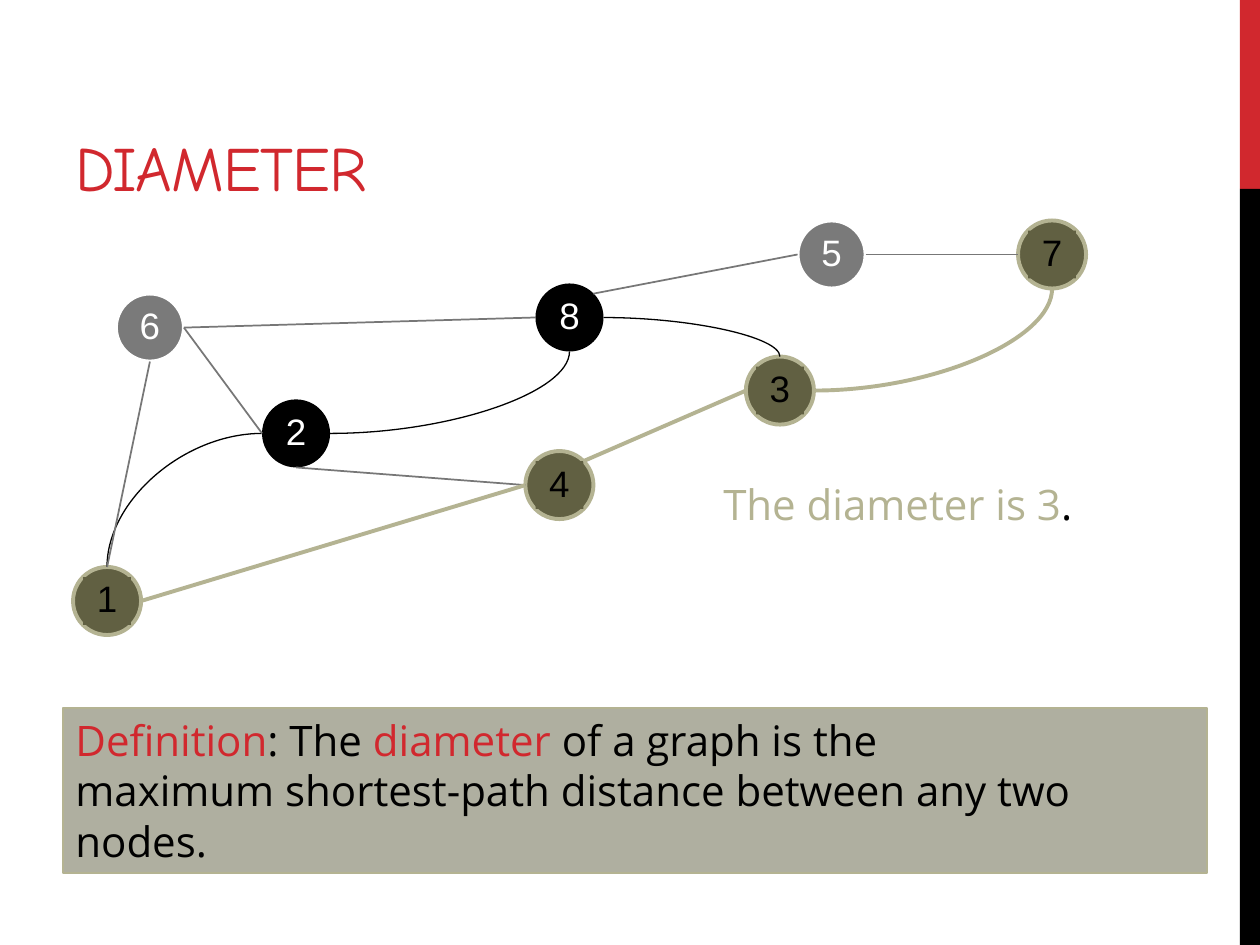
from dataclasses import dataclass

from lxml.etree import SubElement
from pptx import Presentation
from pptx.dml.color import RGBColor
from pptx.enum.shapes import MSO_CONNECTOR as Connector, MSO_SHAPE as Preset
from pptx.enum.text import MSO_ANCHOR as Anchor, MSO_AUTO_SIZE as AutoSize, PP_ALIGN as Align
from pptx.oxml.ns import qn
from pptx.util import Inches, Pt


@dataclass(frozen=True)
class Theme:
    red: str = "D1282E"
    black: str = "000000"
    white: str = "FFFFFF"
    olive: str = "616042"
    sand: str = "B4B392"
    gray: str = "7A7A7A"
    edge_gray: str = "777777"
    title_font: str = "Comic Neue"
    body_font: str = "Open Sans"
    node_font: str = "Arial"
    title_size: float = 36
    body_size: float = 24
    node_size: float = 21
    thin: float = 0.75
    medium: float = 1
    thick: float = 2.25


THEME = Theme()
WIDTH, HEIGHT = 10, 7.5
NODE_SIZE = 0.54
LABEL_INSET = 0.08

# Styles: fill, outline, text
PATH = (THEME.olive, THEME.sand, THEME.black)
VISITED = (THEME.black, None, THEME.white)
OTHER = (THEME.gray, THEME.white, THEME.white)

# Label: left and top within the graph box, style
NODES = {
    "1": (0, 2.75, PATH),
    "2": (1.5, 1.42, VISITED),
    "8": (3.67, 0.5, VISITED),
    "3": (5.34, 1.08, PATH),
    "7": (7.5, 0, PATH),
    "4": (3.59, 1.83, PATH),
    "5": (5.75, 0, OTHER),
    "6": (0.34, 0.58, OTHER),
}

# Connection sites as shares of a node's size
SITES = {
    "left": (0, 0.5), "right": (1, 0.5), "top": (0.5, 0),
    "bottom": (0.5, 1), "top right": (0.85, 0.15),
}

CURVE, STRAIGHT = Connector.CURVE, Connector.STRAIGHT
BLACK_LINE = (THEME.black, THEME.thin)
GRAY_LINE = (THEME.edge_gray, THEME.medium)
PATH_LINE = (THEME.sand, THEME.thick)

# Curves leave sideways and arrive vertically
EDGES = [
    ("2", "left", "1", "top", CURVE, BLACK_LINE),
    ("2", "right", "8", "bottom", CURVE, BLACK_LINE),
    ("8", "right", "3", "top", CURVE, BLACK_LINE),
    ("3", "right", "7", "bottom", CURVE, PATH_LINE),
    ("6", "right", "2", "left", STRAIGHT, GRAY_LINE),
    ("6", "bottom", "1", "top", STRAIGHT, GRAY_LINE),
    ("4", "left", "2", "bottom", STRAIGHT, GRAY_LINE),
    ("4", "top right", "3", "left", STRAIGHT, PATH_LINE),
    ("8", "top right", "5", "left", STRAIGHT, GRAY_LINE),
    ("5", "right", "7", "left", STRAIGHT, GRAY_LINE),
    ("6", "right", "8", "left", STRAIGHT, GRAY_LINE),
    ("1", "right", "4", "left", STRAIGHT, PATH_LINE),
]


def inches(box):
    return [Inches(length) for length in box]


def rgb(color):
    return RGBColor.from_string(color)


def style_font(run, font, size, color):
    run.font.name, run.font.size = font, Pt(size)
    run.font.color.rgb = rgb(color)


def add_filled(shapes, preset, box, fill, line=None, weight=THEME.thick):
    shape = shapes.add_shape(preset, *inches(box))
    shape.shadow.inherit = False
    if fill:
        shape.fill.solid()
        shape.fill.fore_color.rgb = rgb(fill)
    else:
        shape.fill.background()
    if line:
        shape.line.color.rgb = rgb(line)
        shape.line.width = Pt(weight)
    else:
        shape.line.fill.background()
    return shape


def write_runs(shape, parts, align):
    """Write (text, color) parts in body type; a newline part is a line break."""
    frame = shape.text_frame
    frame.word_wrap = True
    frame.auto_size = AutoSize.SHAPE_TO_FIT_TEXT
    paragraph = frame.paragraphs[0]
    paragraph.alignment = align
    for text, color in parts:
        if text == "\n":
            paragraph.add_line_break()
            continue
        run = paragraph.add_run()
        run.text = text
        style_font(run, THEME.body_font, THEME.body_size, color)


def add_side_bar(slide, box):
    left, top, width, height = box
    split = height / 5
    add_filled(slide.shapes, Preset.RECTANGLE, (left, top, width, split), THEME.red)
    add_filled(slide.shapes, Preset.RECTANGLE,
               (left, top + split, width, height - split), THEME.black)


def set_title(slide, box, text):
    title = slide.shapes.title
    title.left, title.top, title.width, title.height = inches(box)
    frame = title.text_frame
    frame.text = text
    frame.vertical_anchor = Anchor.BOTTOM
    frame.auto_size = AutoSize.NONE
    paragraph = frame.paragraphs[0]
    paragraph.alignment = Align.LEFT
    run = paragraph.runs[0]
    style_font(run, THEME.title_font, THEME.title_size, THEME.red)
    run.font._element.set("spc", "-60")


def add_node(slide, left, top, label, style):
    fill, outline, text_color = style
    group = slide.shapes.add_group_shape()
    add_filled(group.shapes, Preset.OVAL, (left, top, NODE_SIZE, NODE_SIZE), fill, outline)
    side = NODE_SIZE - 2 * LABEL_INSET
    plate = add_filled(group.shapes, Preset.RECTANGLE,
                       (left + LABEL_INSET, top + LABEL_INSET, side, side),
                       None if style is OTHER else fill)
    frame = plate.text_frame
    frame.text = label
    frame.vertical_anchor = Anchor.MIDDLE
    frame.margin_left = frame.margin_right = Inches(0.03)
    frame.margin_top = frame.margin_bottom = Inches(0.03)
    paragraph = frame.paragraphs[0]
    paragraph.alignment = Align.CENTER
    paragraph.line_spacing = 0.9
    style_font(paragraph.runs[0], THEME.node_font, THEME.node_size, text_color)


def add_edge(slide, start, end, kind, line):
    connector = slide.shapes.add_connector(kind, *inches(start + end))
    color, weight = line
    connector.line.color.rgb = rgb(color)
    connector.line.width = Pt(weight)
    properties = connector._element.spPr
    SubElement(properties, qn("a:effectLst"))
    if kind == CURVE:
        properties.find(qn("a:prstGeom")).set("prst", "curvedConnector2")


def add_graph(slide, origin):
    left, top = origin

    def site(label, name):
        x, y, _ = NODES[label]
        across, down = SITES[name]
        return left + x + across * NODE_SIZE, top + y + down * NODE_SIZE

    for label, (x, y, style) in NODES.items():
        add_node(slide, left + x, top + y, label, style)
    for first, leave, second, arrive, kind, line in EDGES:
        add_edge(slide, site(first, leave), site(second, arrive), kind, line)


def add_definition(slide, box):
    panel = add_filled(slide.shapes, Preset.RECTANGLE, box, THEME.olive, THEME.sand, THEME.thin)
    color = panel._element.spPr.find(qn("a:solidFill"))[0]
    SubElement(color, qn("a:alpha")).set("val", "50000")
    panel.text_frame.vertical_anchor = Anchor.TOP
    write_runs(panel, [
        ("Definition", THEME.red), (": The ", THEME.black), ("diameter ", THEME.red),
        ("of a graph is the ", THEME.black), ("\n", None),
        ("maximum shortest-path distance between any two nodes.", THEME.black),
    ], Align.LEFT)


def add_answer(slide, box):
    answer = slide.shapes.add_textbox(*inches(box))
    write_runs(answer, [("The diameter is 3", THEME.sand), (".", THEME.black)], Align.CENTER)


def main():
    presentation = Presentation()
    presentation.slide_width, presentation.slide_height = inches((WIDTH, HEIGHT))
    slide = presentation.slides.add_slide(presentation.slide_layouts[5])
    add_side_bar(slide, (9.84, 0, 0.16, HEIGHT))
    set_title(slide, (0.5, 0.17, 6.33, 1.5), "DIAMETER")
    add_graph(slide, (0.58, 1.75))
    add_definition(slide, (0.5, 5.62, 9.08, 1.31))
    add_answer(slide, (5.5, HEIGHT / 2, 3.25, 0.51))
    presentation.save("out.pptx")


if __name__ == "__main__":
    main()
